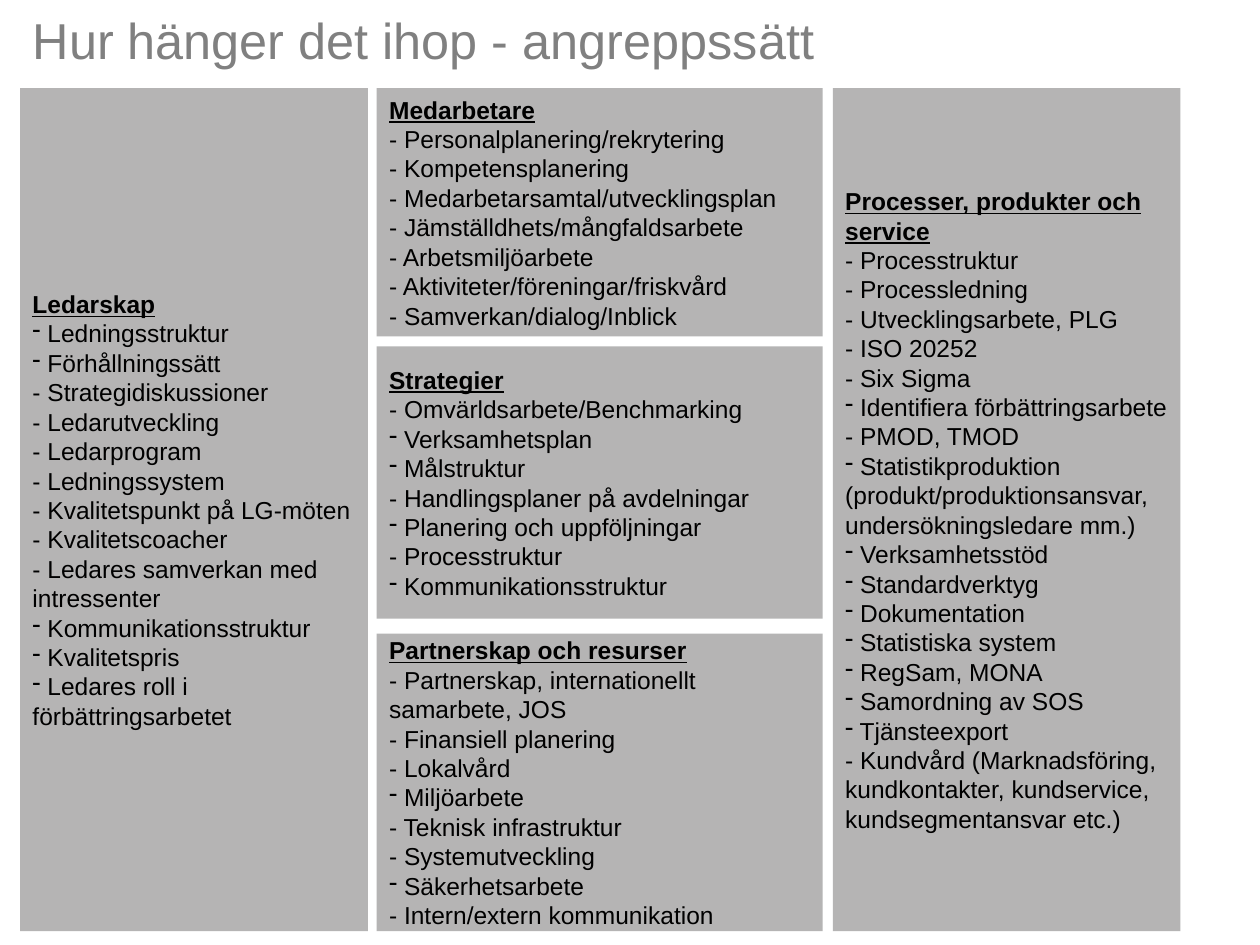
"""Build the slide on how the approaches fit together."""
from lxml import etree
from pptx import Presentation
from pptx import util as u
from pptx.dml.color import RGBColor
from pptx.enum import shapes, text
from pptx.oxml.ns import qn

HEADLINE = "Hur hänger det ihop - angreppssätt"
PANEL_GREY = RGBColor(0xB5, 0xB4, 0xB4)
TITLE_GREY = RGBColor(0x80, 0x80, 0x80)
BLACK = RGBColor(0, 0, 0)
FONT = "Arial"

COLUMNS = {"left": (0.16, 2.76), "middle": (2.99, 3.54), "right": (6.61, 2.76)}
TOP, BOTTOM = 0.7, 7.39

PANELS = [
    ("right", TOP, BOTTOM, "Processer, produkter och service", [
        "- Processtruktur", "- Processledning", "- Utvecklingsarbete, PLG",
        "- ISO 20252", "- Six Sigma", " Identifiera förbättringsarbete",
        "- PMOD, TMOD",
        " Statistikproduktion (produkt/produktionsansvar, undersökningsledare mm.)",
        " Verksamhetsstöd", " Standardverktyg", " Dokumentation",
        " Statistiska system", " RegSam, MONA", " Samordning av SOS",
        " Tjänsteexport",
        "- Kundvård (Marknadsföring, kundkontakter, kundservice, "
        "kundsegmentansvar etc.)"]),
    ("left", TOP, BOTTOM, "Ledarskap", [
        " Ledningsstruktur", " Förhållningssätt", "- Strategidiskussioner",
        "- Ledarutveckling", "- Ledarprogram", "- Ledningssystem",
        "- Kvalitetspunkt på LG-möten", "- Kvalitetscoacher",
        "- Ledares samverkan med intressenter", " Kommunikationsstruktur",
        " Kvalitetspris", " Ledares roll i förbättringsarbetet"]),
    ("middle", 5.03, BOTTOM, "Partnerskap och resurser", [
        "- Partnerskap, internationellt samarbete, JOS",
        "- Finansiell planering", "- Lokalvård", " Miljöarbete",
        "- Teknisk infrastruktur", "- Systemutveckling", " Säkerhetsarbete",
        "- Intern/extern kommunikation"]),
    ("middle", 2.75, 4.91, "Strategier", [
        "- Omvärldsarbete/Benchmarking", " Verksamhetsplan", " Målstruktur",
        "- Handlingsplaner på avdelningar", " Planering och uppföljningar",
        "- Processtruktur", " Kommunikationsstruktur"]),
    ("middle", TOP, 2.67, "Medarbetare", [
        "- Personalplanering/rekrytering", "- Kompetensplanering",
        "- Medarbetarsamtal/utvecklingsplan", "- Jämställdhets/mångfaldsarbete",
        "- Arbetsmiljöarbete", "- Aktiviteter/föreningar/friskvård",
        "- Samverkan/dialog/Inblick"]),
]


def style(paragraph, size, color, heading=False):
    paragraph.alignment = text.PP_ALIGN.LEFT
    for run in paragraph.runs:
        run.font.name, run.font.size = FONT, u.Pt(size)
        run.font.color.rgb = color
        run.font.bold = run.font.underline = heading


def add_dash_bullet(paragraph):
    properties = paragraph._p.get_or_add_pPr()
    etree.SubElement(properties, qn("a:buFontTx"))
    etree.SubElement(properties, qn("a:buChar")).set("char", "-")


def add_panel(slide, column, top, bottom, heading, activities):
    left, width = COLUMNS[column]
    panel = slide.shapes.add_shape(
        shapes.MSO_SHAPE.RECTANGLE, u.Inches(left), u.Inches(top),
        u.Inches(width), u.Inches(bottom - top))
    panel.shadow.inherit = False
    panel.fill.solid()
    panel.fill.fore_color.rgb = PANEL_GREY
    panel.line.fill.background()
    frame = panel.text_frame
    frame.word_wrap = True
    frame.vertical_anchor = text.MSO_ANCHOR.MIDDLE
    frame.text = heading
    style(frame.paragraphs[0], 14, BLACK, heading=True)
    for activity in activities:
        line = frame.add_paragraph()
        line.text = activity
        if activity.startswith(" "):
            add_dash_bullet(line)
        style(line, 14, BLACK)


def main():
    deck = Presentation()
    deck.slide_width, deck.slide_height = u.Inches(10), u.Inches(7.5)
    slide = deck.slides.add_slide(deck.slide_layouts[5])

    title = slide.shapes.title
    title.left, title.top = u.Inches(0.16), u.Inches(0)
    title.width, title.height = u.Inches(9), u.Inches(0.62)
    title.text_frame.text = HEADLINE
    title.text_frame.auto_size = text.MSO_AUTO_SIZE.NONE
    title.text_frame.vertical_anchor = text.MSO_ANCHOR.MIDDLE
    style(title.text_frame.paragraphs[0], 28.8, TITLE_GREY)

    for panel in PANELS:
        add_panel(slide, *panel)
    deck.save("out.pptx")


if __name__ == "__main__":
    main()
